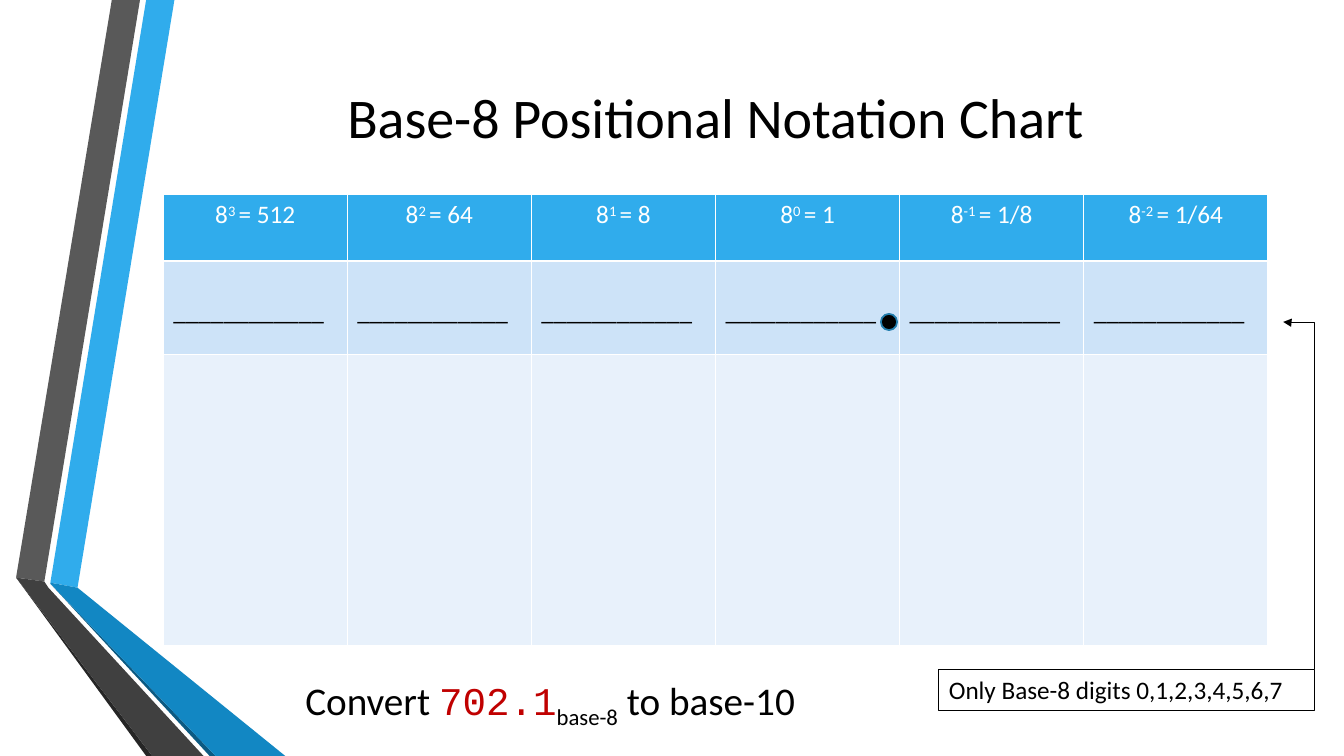
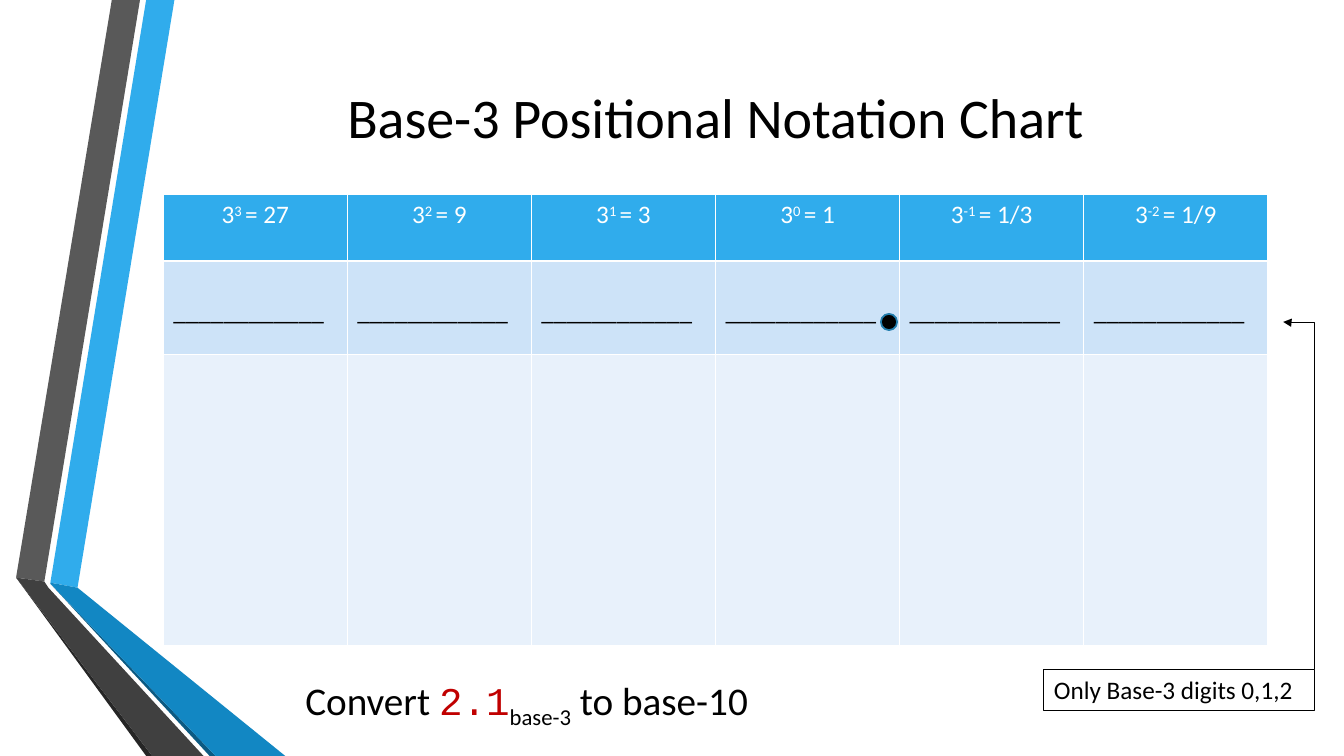
from lxml import etree
from pptx import Presentation
from pptx.dml.color import RGBColor
from pptx.enum import shapes, text
from pptx.oxml import ns
from pptx.util import Pt

EXERCISES = [(8, "702.1"), (3, "2.1")]  # base, number to convert
EXPONENTS = [3, 2, 1, 0, -1, -2]
BLANK = "_" * 12

COLORS = {
    "blue": "30ACEC", "deep_blue": "1287C3", "navy": "0C5A82", "dot_edge": "247FAF",
    "gray": "595959", "charcoal": "404040", "dark": "262626",
    "digit_row": "CDE3F8", "work_row": "E8F1FB",
    "number": "C00000", "black": "000000", "white": "FFFFFF",
}
FONT, NUMBER_FONT = "Calibri", "Courier New"

RIBBONS = [
    ("blue", [(36, 416.2), (55.4, 419.8), (124.6, 0), (104.4, 0)]),
    ("gray", [(100, 0), (79.9, 0), (11.5, 412.6), (31.7, 415.4)]),
    ("dark", [(11.5, 412.6), (104.4, 540), (108.7, 540)]),
    ("navy", [(36, 416.9), (149.8, 540), (154.1, 540)]),
    ("deep_blue", [(36, 416.9), (154.1, 540), (203.8, 540), (55.4, 419.8), (36, 416.2)]),
    ("charcoal", [(145.4, 540), (34.6, 419.8), (31.7, 415.4), (11.5, 412.6), (108.7, 540)]),
]

CHART_LEFT, CHART_TOP, COLUMN_WIDTH = 116.6, 139, 131.5
CHART_WIDTH = COLUMN_WIDTH * len(EXPONENTS)
ROW_HEIGHTS = [47.5, 67, 208]
NOTE_RIGHT, NOTE_TOP, NOTE_HEIGHT = 938.7, 478.2, 29
NOTE_WIDTHS = {8: 268, 3: 193}
ARROW_LEFT, DIGITS_Y = 916.6, 230
DOT_SIZE = 11.6


def rgb(name):
    return RGBColor.from_string(COLORS[name])


def style(font, size, color="black", name=FONT):
    font.name, font.size, font.bold = name, Pt(size), False
    font.color.rgb = rgb(color)


def add_run(paragraph, content, baseline=None):
    """Append a run; baseline is its raise in percent of the text size."""
    run = paragraph.add_run()
    run.text = content
    if baseline:
        run._r.get_or_add_rPr().set("baseline", str(baseline * 1000))
    return run


def set_up_layout(layout, slide):
    """Place the title and move ribbons drawn on the slide to its layout."""
    title = layout.placeholders[0]
    title.left, title.top = Pt(CHART_LEFT), Pt(54)
    title.width, title.height = Pt(CHART_WIDTH), Pt(57.6)
    for color, outline in RIBBONS:
        start, *rest = [(Pt(x), Pt(y)) for x, y in outline]
        builder = slide.shapes.build_freeform(*start)
        builder.add_line_segments(rest, close=True)
        ribbon = builder.convert_to_shape()
        ribbon.shadow.inherit = False
        ribbon.fill.solid()
        ribbon.fill.fore_color.rgb = rgb(color)
        ribbon.line.fill.background()
        layout.shapes.element.append(ribbon._element)


def add_title(slide, base):
    title = slide.shapes.title
    title.text_frame.text = f"Base-{base} Positional Notation Chart"
    title.text_frame.vertical_anchor = text.MSO_ANCHOR.MIDDLE
    heading = title.text_frame.paragraphs[0]
    heading.alignment = text.PP_ALIGN.CENTER
    style(heading.font, 40)


def add_place_chart(slide, base):
    chart = slide.shapes.add_table(
        len(ROW_HEIGHTS), len(EXPONENTS), Pt(CHART_LEFT), Pt(CHART_TOP),
        Pt(CHART_WIDTH), Pt(sum(ROW_HEIGHTS))).table
    for row, height, fill in zip(chart.rows, ROW_HEIGHTS, ("blue", "digit_row", "work_row")):
        row.height = Pt(height)
        for cell in row.cells:
            cell.fill.solid()
            cell.fill.fore_color.rgb = rgb(fill)
    for column, exponent in enumerate(EXPONENTS):
        chart.columns[column].width = Pt(COLUMN_WIDTH)
        power = chart.cell(0, column).text_frame.paragraphs[0]
        power.alignment = text.PP_ALIGN.CENTER
        style(power.font, 18, "white")
        value = base ** exponent if exponent >= 0 else f"1/{base ** -exponent}"
        add_run(power, str(base))
        add_run(power, f"{exponent} ", 30)
        add_run(power, f"= {value}")
        digit = chart.cell(1, column)
        digit.margin_top = Pt(25.6)
        digit.text_frame.text = BLANK
        style(digit.text_frame.paragraphs[0].font, 18)


def add_radix_point(slide):
    ones_right = CHART_LEFT + COLUMN_WIDTH * (EXPONENTS.index(0) + 1)
    dot = slide.shapes.add_shape(
        shapes.MSO_SHAPE.OVAL, Pt(ones_right - DOT_SIZE - 1.8), Pt(DIGITS_Y - DOT_SIZE / 2),
        Pt(DOT_SIZE), Pt(DOT_SIZE))
    dot.shadow.inherit = False
    dot.fill.solid()
    dot.fill.fore_color.rgb = rgb("black")
    dot.line.color.rgb = rgb("dot_edge")
    dot.line.width = Pt(1.25)


def add_digits_note(slide, base):
    width = NOTE_WIDTHS[base]
    note = slide.shapes.add_textbox(
        Pt(NOTE_RIGHT - width), Pt(NOTE_TOP), Pt(width), Pt(NOTE_HEIGHT))
    note.line.color.rgb = rgb("black")
    note.line.width = Pt(0.75)
    note.text_frame.word_wrap = True
    digits = ",".join(map(str, range(base)))
    note.text_frame.text = f"Only Base-{base} digits {digits}"
    style(note.text_frame.paragraphs[0].font, 18)


def add_note_arrow(slide):
    """Bent arrow from the note's corner up and left to the digit row."""
    across, up = NOTE_RIGHT - ARROW_LEFT, NOTE_TOP - DIGITS_Y
    center_x, center_y = NOTE_RIGHT - across / 2, NOTE_TOP - up / 2
    # Laid out sideways, then turned about its centre.
    arrow = slide.shapes.add_connector(
        shapes.MSO_CONNECTOR.ELBOW,
        Pt(center_x - up / 2), Pt(center_y + across / 2),
        Pt(center_x + up / 2), Pt(center_y - across / 2))
    arrow.line.color.rgb = rgb("black")
    arrow.line.width = Pt(0.75)
    properties = arrow._element.spPr
    properties.find(ns.qn("a:xfrm")).set("rot", str(270 * 60000))
    bends = properties.find(ns.qn("a:prstGeom")).get_or_add_avLst()
    etree.SubElement(bends, ns.qn("a:gd"), name="adj1", fmla="val 99800")
    etree.SubElement(properties.find(ns.qn("a:ln")), ns.qn("a:tailEnd"), type="triangle")
    etree.SubElement(properties, ns.qn("a:effectLst"))


def add_task(slide, base, number):
    task = slide.shapes.add_textbox(Pt(211), Pt(479.5), Pt(397), Pt(41))
    task.text_frame.word_wrap = True
    sentence = task.text_frame.paragraphs[0]
    style(sentence.font, 28)
    add_run(sentence, "Convert ")
    style(add_run(sentence, number).font, 28, "number", NUMBER_FONT)
    add_run(sentence, f"base-{base}", -25)
    add_run(sentence, " to base-10")


def main():
    deck = Presentation()
    deck.slide_width, deck.slide_height = Pt(960), Pt(540)
    layout = deck.slide_layouts.get_by_name("Title Only")
    for index, (base, number) in enumerate(EXERCISES):
        slide = deck.slides.add_slide(layout)
        if index == 0:
            set_up_layout(layout, slide)
        add_title(slide, base)
        add_place_chart(slide, base)
        add_radix_point(slide)
        add_digits_note(slide, base)
        add_note_arrow(slide)
        add_task(slide, base, number)
    deck.save("out.pptx")


if __name__ == "__main__":
    main()
